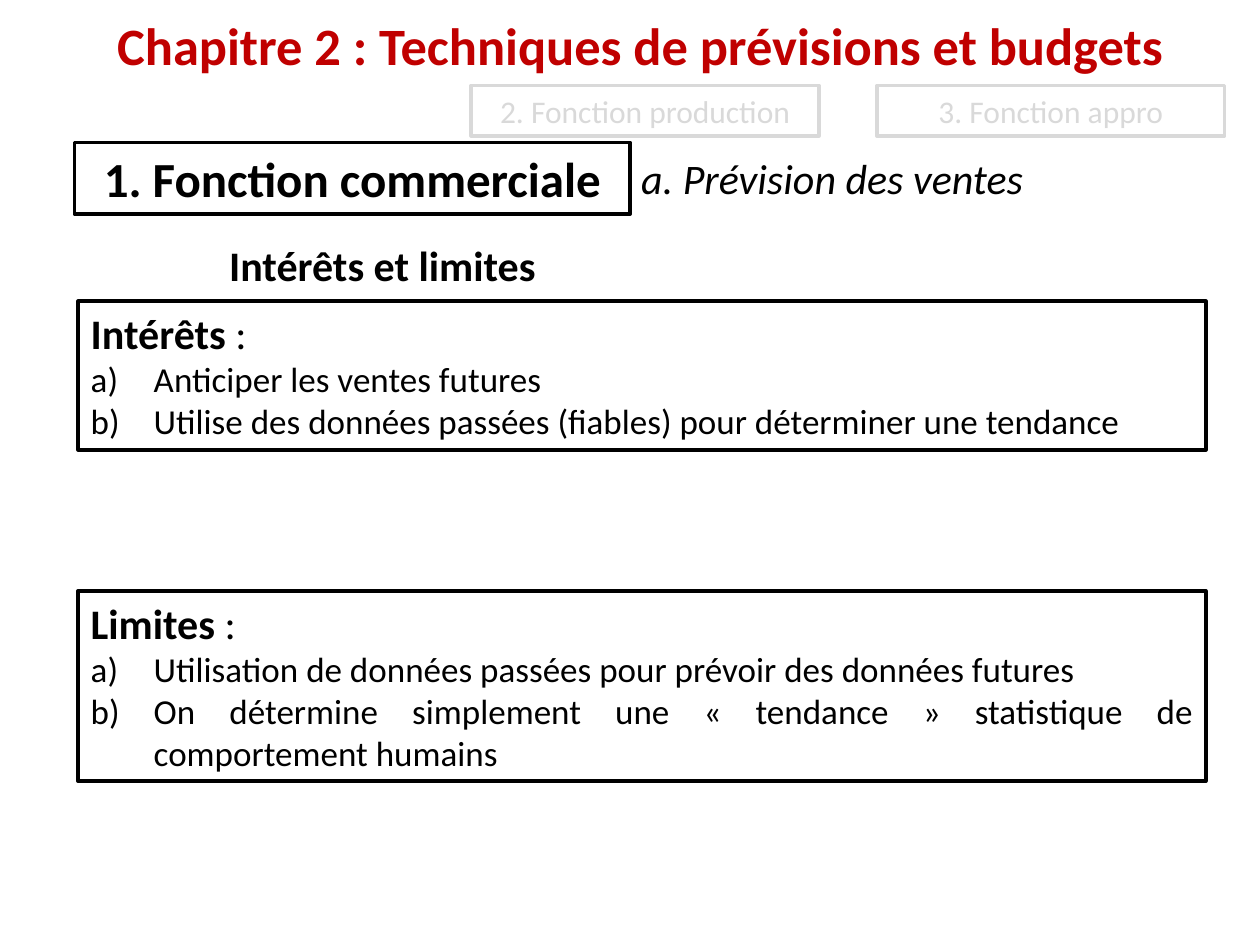
from lxml.etree import SubElement
from pptx import Presentation
from pptx.dml.color import RGBColor
from pptx.enum.shapes import MSO_SHAPE
from pptx.enum.text import MSO_ANCHOR, MSO_AUTO_SIZE, PP_ALIGN
from pptx.oxml.ns import qn
from pptx.util import Inches, Pt

RED = RGBColor(0xC0, 0x00, 0x00)
BLACK = RGBColor(0x00, 0x00, 0x00)
GREY = RGBColor(0xD9, 0xD9, 0xD9)
WHITE = RGBColor(0xFF, 0xFF, 0xFF)
FONT = "Calibri"

# Content
TITLE = "Chapitre 2 : Techniques de prévisions et budgets"
# text, (left, top, width, height), size, colour, bold
STEPS = [
    ("1. Fonction commerciale", (0.59, 1.13, 4.41, 0.57), 28, BLACK, True),
    ("2. Fonction production", (3.74, 0.68, 2.76, 0.4), 18, GREY, False),
    ("3. Fonction appro", (6.96, 0.68, 2.76, 0.4), 18, GREY, False),
]
# text, box, left indent, bold, italic
HEADINGS = [
    ("a. Prévision des ventes", (4.99, 1.16, 4.37, 0.5), 0, False, True),
    ("Intérêts et limites", (0.72, 1.85, 8.95, 0.5), 1, True, False),
]
# heading, top, height, items
PANELS = [
    ("Intérêts", 2.39, 1.18, [
        "Anticiper les ventes futures",
        "Utilise des données passées (fiables) pour déterminer une tendance",
    ]),
    ("Limites", 4.69, 1.51, [
        "Utilisation de données passées pour prévoir des données futures",
        "On détermine simplement une « tendance » statistique de comportement humains",
    ]),
]
PANEL_LEFT, PANEL_WIDTH = 0.62, 8.95


def place(s, box):
    s.left, s.top, s.width, s.height = (Inches(v) for v in box)


def frame(s, color):
    s.fill.solid()
    s.fill.fore_color.rgb = WHITE
    s.line.color.rgb = color
    s.line.width = Pt(2)


def setup(s, anchor=MSO_ANCHOR.TOP):
    tf = s.text_frame
    tf.word_wrap = True
    tf.auto_size = MSO_AUTO_SIZE.NONE
    tf.vertical_anchor = anchor
    return tf


def add_run(p, text, size, color=BLACK, bold=False, italic=False):
    r = p.add_run()
    r.text = text
    f = r.font
    f.name, f.size, f.bold, f.italic = FONT, Pt(size), bold, italic
    f.color.rgb = color


def format_par(p, align, left=0, hanging=0, numbered=False):
    p.alignment = align
    p.space_before = Pt(0)
    pPr = p._p.get_or_add_pPr()
    pPr.set("marL", str(Inches(left)))
    pPr.set("indent", str(-Inches(hanging)))
    if numbered:
        SubElement(pPr, qn("a:buFont"), typeface="+mj-lt")
        SubElement(pPr, qn("a:buAutoNum"), type="alphaLcParenR")
    else:
        SubElement(pPr, qn("a:buNone"))


prs = Presentation()
prs.slide_width, prs.slide_height = Inches(10), Inches(7.5)
slide = prs.slides.add_slide(prs.slide_layouts.get_by_name("Two Content"))
title, *bodies = [s for s in slide.placeholders if s.placeholder_format.idx <= 2]

# Chapter title
place(title, (0.83, 0.05, 8.74, 0.61))
p = setup(title).paragraphs[0]
format_par(p, PP_ALIGN.LEFT)
add_run(p, TITLE, 30, RED, bold=True)

# Chapter steps, the current one in black
for text, box, size, color, bold in STEPS:
    s = slide.shapes.add_shape(MSO_SHAPE.RECTANGLE, *(Inches(v) for v in box))
    s.shadow.inherit = False
    frame(s, color)
    p = setup(s).paragraphs[0]
    p.alignment = PP_ALIGN.CENTER
    add_run(p, text, size, color, bold)

# Section headings
for text, box, left, bold, italic in HEADINGS:
    s = slide.shapes.add_textbox(*(Inches(v) for v in box))
    p = setup(s).paragraphs[0]
    format_par(p, PP_ALIGN.LEFT, left)
    add_run(p, text, 24, bold=bold, italic=italic)

# Framed lists
for s, (heading, top, height, items) in zip(bodies, PANELS):
    place(s, (PANEL_LEFT, top, PANEL_WIDTH, height))
    frame(s, BLACK)
    tf = setup(s)
    p = tf.paragraphs[0]
    format_par(p, PP_ALIGN.JUSTIFY)
    add_run(p, heading, 24, bold=True)
    add_run(p, " :", 24)
    for item in items:
        p = tf.add_paragraph()
        format_par(p, PP_ALIGN.JUSTIFY, 0.5, 0.5, numbered=True)
        add_run(p, item, 20)

prs.save("out.pptx")
